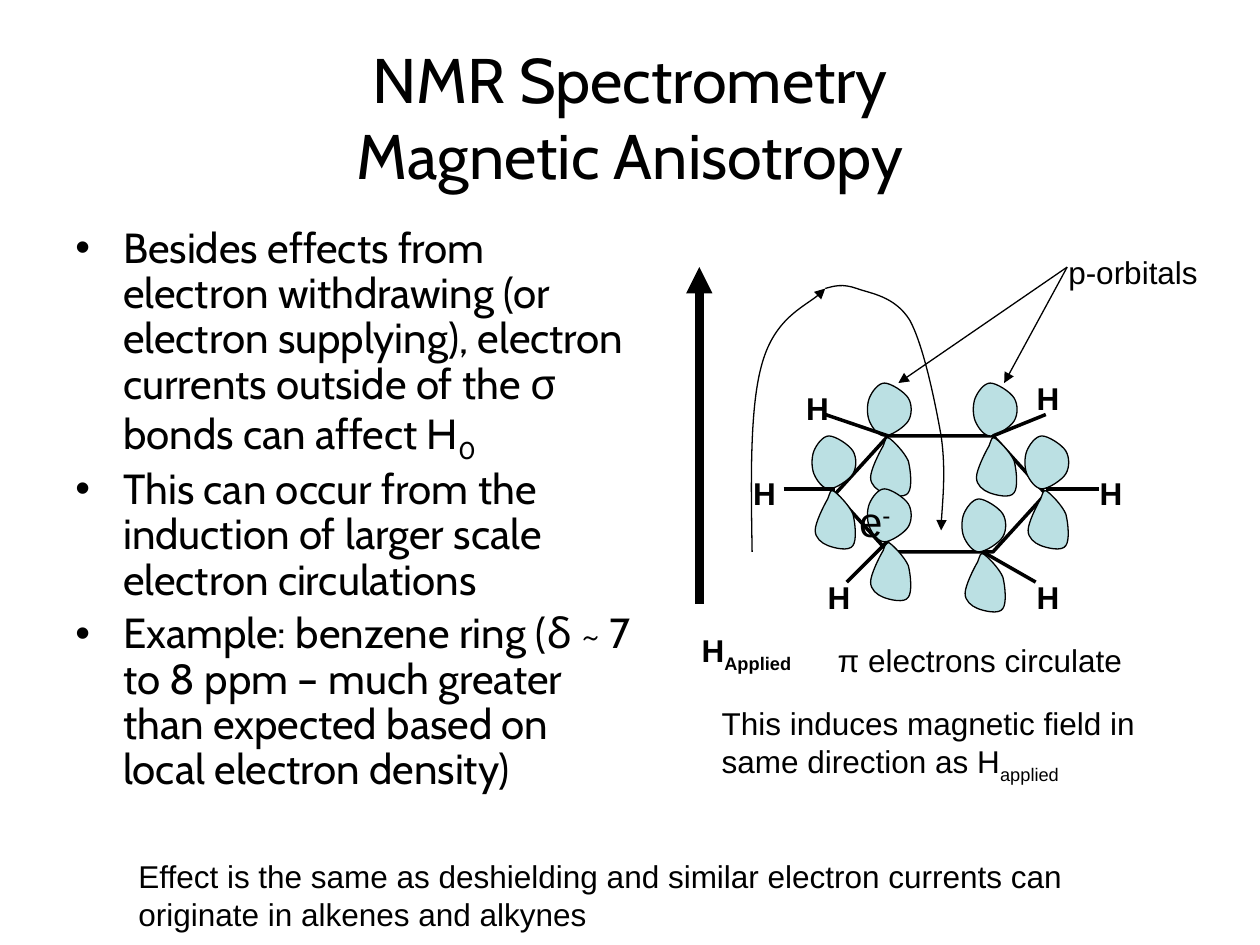
from lxml import etree
from pptx import Presentation
from pptx import util as u
from pptx.dml import color
from pptx.enum import shapes, text
from pptx.oxml import ns

COLORS = {"ink": "000000", "orbital": "BBE0E3"}
INK = color.RGBColor.from_string(COLORS["ink"])
ORBITAL = color.RGBColor.from_string(COLORS["orbital"])

presentation = Presentation()
presentation.slide_width = u.Inches(10)
presentation.slide_height = u.Inches(7.5)
slide = presentation.slides.add_slide(presentation.slide_layouts[5])


def add_runs(paragraph, runs, size, font="Arial", bold=False):
    for words, baseline in runs:
        run = paragraph.add_run()
        run.text = words
        run.font.size = u.Pt(size)
        run.font.name = font
        run.font.bold = bold
        run.font.color.rgb = INK
        if baseline:
            run.font._element.set("baseline", str(baseline * 1000))


def add_curve(points, filled=False, arrow=False):
    points = [(u.Inches(x), u.Inches(y)) for x, y in points]
    builder = slide.shapes.build_freeform(*points[0])
    builder.add_line_segments(points[1:], close=filled)
    shape = builder.convert_to_shape()
    segments = list(shape._element.iter(ns.qn("a:lnTo")))
    for index in range(0, len(segments) // 3 * 3, 3):
        curve = etree.Element(ns.qn("a:cubicBezTo"))
        segments[index].addprevious(curve)
        for segment in segments[index:index + 3]:
            curve.append(segment[0])
            segment.getparent().remove(segment)
    for segment in segments[len(segments) // 3 * 3:]:
        segment.getparent().remove(segment)
    shape.shadow.inherit = False
    if filled:
        shape.fill.solid()
        shape.fill.fore_color.rgb = ORBITAL
    else:
        shape.fill.background()
    shape.line.color.rgb = INK
    shape.line.width = u.Pt(0.75)
    if arrow:
        etree.SubElement(shape.line._get_or_add_ln(), ns.qn("a:tailEnd"), type="triangle")


title = slide.shapes.title
title.left, title.top = u.Inches(0.5), u.Inches(0.3)
title.width, title.height = u.Inches(9), u.Inches(1.25)
title.text_frame.auto_size = text.MSO_AUTO_SIZE.NONE
title.text_frame.vertical_anchor = text.MSO_ANCHOR.MIDDLE
paragraph = title.text_frame.paragraphs[0]
paragraph.alignment = text.PP_ALIGN.CENTER
add_runs(paragraph, [("NMR Spectrometry", 0)], 36, "Cabin")
paragraph.add_line_break()
add_runs(paragraph, [("Magnetic Anisotropy", 0)], 36, "Cabin")

bullets = [
    [("Besides effects from electron withdrawing (or electron supplying), "
      "electron currents outside of the σ bonds can affect H", 0), ("0", -25)],
    [("This can occur from the induction of larger scale electron circulations", 0)],
    [("Example: benzene ring (δ ~ 7 to 8 ppm – much greater than expected "
      "based on local electron density)", 0)],
]
body = slide.shapes.add_textbox(u.Inches(0.5), u.Inches(1.75), u.Inches(4.67), u.Inches(4.95))
body.text_frame.word_wrap = True
for index, runs in enumerate(bullets):
    paragraph = body.text_frame.add_paragraph() if index else body.text_frame.paragraphs[0]
    properties = paragraph._p.get_or_add_pPr()
    properties.set("marL", str(u.Inches(0.38)))
    properties.set("indent", str(u.Inches(-0.38)))
    etree.SubElement(properties, ns.qn("a:buFont"), typeface="Arial")
    etree.SubElement(properties, ns.qn("a:buChar"), char="•")
    paragraph.line_spacing = 0.9
    if index:
        paragraph.space_before = u.Pt(4.8)
    add_runs(paragraph, runs, 24, "Cabin")

ring = slide.shapes.add_shape(
    shapes.MSO_SHAPE.HEXAGON, u.Inches(6.63), u.Inches(3.46), u.Inches(1.67), u.Inches(0.92))
ring.adjustments[0] = 0.455
ring.adjustments[1] = 1.155
ring.shadow.inherit = False
ring.fill.background()
ring.line.color.rgb = INK
ring.line.width = u.Pt(2)

upper_lobe = [
    (0.14, 0.42), (0.09, 0.42), (0.04, 0.35), (0.02, 0.3), (0, 0.25), (0, 0.17), (0.02, 0.12),
    (0.04, 0.07), (0.09, 0), (0.14, 0), (0.19, 0), (0.3, 0.07), (0.33, 0.12),
    (0.36, 0.17), (0.36, 0.25), (0.33, 0.3), (0.3, 0.35), (0.19, 0.42), (0.14, 0.42)]
lower_lobe = [
    (0.18, 0.44), (0.15, 0.42), (0.15, 0.45), (0.13, 0.5), (0.1, 0.55), (0.03, 0.69), (0.03, 0.75),
    (0.03, 0.81), (0.08, 0.85), (0.13, 0.87), (0.18, 0.89), (0.3, 0.92), (0.33, 0.87),
    (0.36, 0.83), (0.35, 0.7), (0.33, 0.62), (0.3, 0.55), (0.21, 0.46), (0.18, 0.44)]
both = [upper_lobe, lower_lobe]
orbitals = [(6.44, 3.46, both), (6.88, 3.87, [lower_lobe]), (7.63, 3.96, both),
            (6.88, 3.04, both), (7.72, 3.04, both), (8.13, 3.46, both)]
for left, top, lobes in orbitals:
    for lobe in lobes:
        add_curve([(left + x, top + y) for x, y in lobe], filled=True)

lines = [
    (6.22, 3.88, 6.63, 3.88, 2, False), (6.55, 3.29, 7.05, 3.46, 2, False),
    (6.72, 4.62, 7.05, 4.29, 2, False), (8.3, 3.88, 8.72, 3.88, 2, False),
    (7.88, 3.46, 8.3, 3.29, 2, False), (7.8, 4.38, 8.22, 4.62, 2, False),
    (5.55, 4.79, 5.55, 2.12, 5, True),
    (8.47, 2.12, 7.97, 3.04, 0.75, True), (8.47, 2.12, 7.13, 3.04, 0.75, True)]
for x1, y1, x2, y2, width, arrow in lines:
    connector = slide.shapes.add_connector(
        shapes.MSO_CONNECTOR.STRAIGHT, u.Inches(x1), u.Inches(y1), u.Inches(x2), u.Inches(y2))
    connector.line.color.rgb = INK
    connector.line.width = u.Pt(width)
    if arrow:
        etree.SubElement(connector.line._get_or_add_ln(), ns.qn("a:tailEnd"), type="triangle")
    etree.SubElement(connector._element.spPr, ns.qn("a:effectLst"))

add_curve([(5.97, 4.38), (5.96, 3.8), (5.95, 3.22), (6.05, 2.88),
           (6.15, 2.53), (6.47, 2.39), (6.55, 2.29)], arrow=True)
add_curve([(6.55, 2.29), (6.62, 2.27), (6.69, 2.25), (6.8, 2.29), (6.91, 2.33), (7.1, 2.35),
           (7.22, 2.54), (7.33, 2.74), (7.42, 3.18), (7.47, 3.46),
           (7.51, 3.74), (7.47, 4.08), (7.47, 4.21)], arrow=True)
add_curve([(6.88 + x, 3.88 + y) for x, y in upper_lobe], filled=True)

hydrogens = [(5.88, 3.71), (6.3, 3.04), (6.47, 4.54), (8.13, 4.54), (8.13, 2.96), (8.63, 3.71)]
labels = [(left, top, 0.5, 0.4, [("H", 0)], 18, True) for left, top in hydrogens]
labels += [
    (5.47, 4.96, 1, 0.4, [("H", 0), ("Applied", -25)], 18, True),
    (8.38, 1.96, 1.25, 0.4, [("p-orbitals", 0)], 18, False),
    (6.55, 5.04, 3.33, 0.4, [("π electrons circulate", 0)], 18, False),
    (5.63, 5.54, 3.83, 0.7, [("This induces magnetic field in same direction as H", 0),
                             ("applied", -25)], 18, False),
    (6.72, 3.88, 0.58, 0.5, [("e", 0), ("-", 30)], 24, False),
    (1, 6.75, 8.08, 0.71, [("Effect is the same as deshielding and similar electron currents can "
                            "originate in alkenes and alkynes", 0)], 18, False)]
for left, top, width, height, runs, size, bold in labels:
    box = slide.shapes.add_textbox(u.Inches(left), u.Inches(top), u.Inches(width), u.Inches(height))
    box.text_frame.word_wrap = True
    add_runs(box.text_frame.paragraphs[0], runs, size, bold=bold)

presentation.save("out.pptx")
